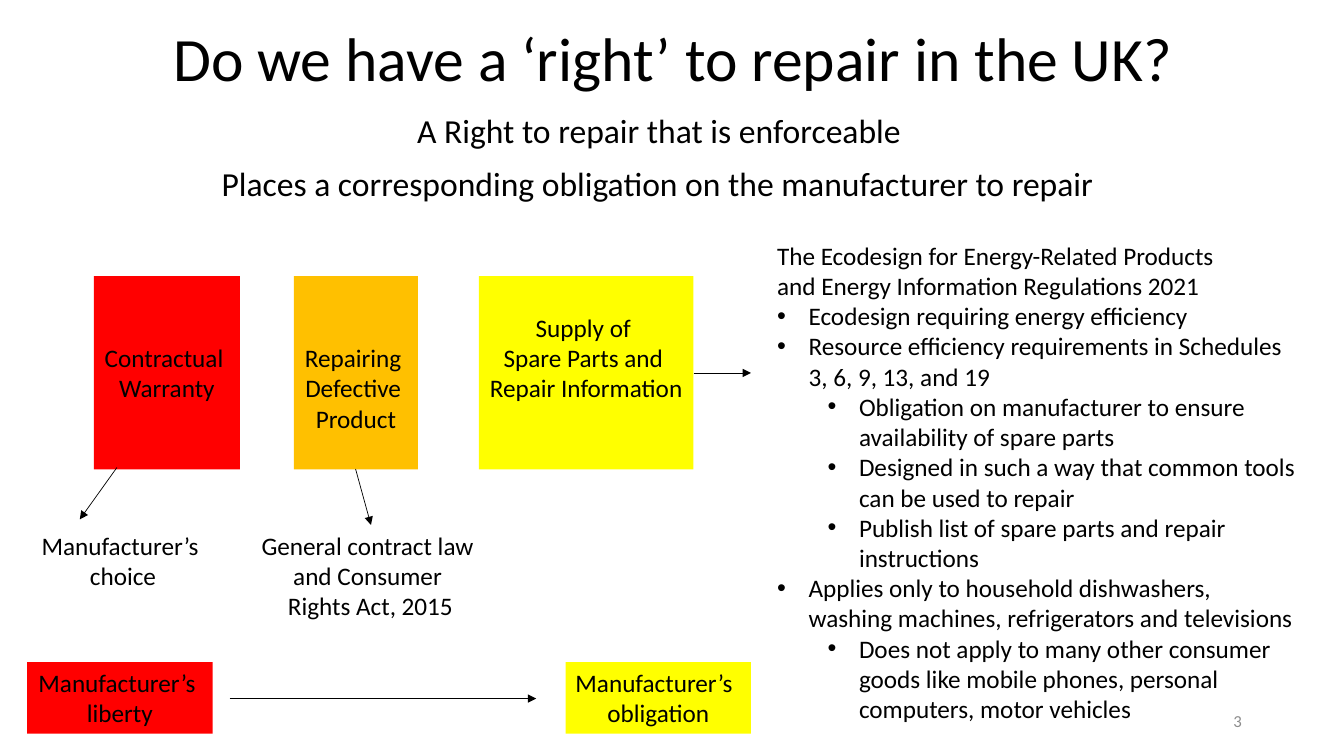
from lxml import etree
from pptx import Presentation
from pptx.dml.color import RGBColor
from pptx.enum.shapes import MSO_CONNECTOR, MSO_SHAPE
from pptx.enum.text import MSO_ANCHOR, PP_ALIGN
from pptx.oxml.ns import qn
from pptx.util import Pt

LEFT, CENTER, RIGHT = PP_ALIGN.LEFT, PP_ALIGN.CENTER, PP_ALIGN.RIGHT
TOP, MIDDLE = MSO_ANCHOR.TOP, MSO_ANCHOR.MIDDLE
RECT, STRAIGHT = MSO_SHAPE.RECTANGLE, MSO_CONNECTOR.STRAIGHT
FONT = "Calibri"
BLACK, RED, AMBER, YELLOW, GREY = "000000", "FF0000", "FFC000", "FFFF00", "8C8C8C"
LINE_HEIGHT = 21.9
BULLET_HANG = 22.5
LEVEL_STEP = 36

REGULATIONS = [
    (None, "The Ecodesign for Energy-Related Products"),
    (None, "and Energy Information Regulations 2021"),
    (0, "Ecodesign requiring energy efficiency"),
    (0, "Resource efficiency requirements in Schedules 3, 6, 9, 13, and 19"),
    (1, "Obligation on manufacturer to ensure availability of spare parts"),
    (1, "Designed in such a way that common tools can be used to repair"),
    (1, "Publish list of spare parts and repair instructions"),
    (0, "Applies only to household dishwashers, washing machines, refrigerators and televisions"),
    (1, "Does not apply to many other consumer goods like mobile phones, "
        "personal computers, motor vehicles"),
]


def rgb(color):
    return RGBColor.from_string(color)


def write(tf, lines, size=18, color=BLACK, align=CENTER, anchor=TOP, wrap=False):
    tf.word_wrap = wrap
    tf.vertical_anchor = anchor
    for i, line in enumerate(lines):
        p = tf.paragraphs[0] if i == 0 else tf.add_paragraph()
        p.text = line
        p.alignment = align
        p.font.name = FONT
        p.font.size = Pt(size)
        p.font.color.rgb = rgb(color)


def add_label(s, box, lines, **style):
    sp = s.shapes.add_textbox(*map(Pt, box))
    write(sp.text_frame, lines, **style)
    return sp


def add_block(s, box, fill, lines, skipped_lines=0):
    sp = s.shapes.add_shape(RECT, *map(Pt, box))
    sp.shadow.inherit = False
    sp.fill.solid()
    sp.fill.fore_color.rgb = rgb(fill)
    sp.line.fill.background()
    write(sp.text_frame, lines)
    sp.text_frame.margin_top = Pt(3.6 + skipped_lines * LINE_HEIGHT)
    return sp


def add_arrow(s, *ends):
    line = s.shapes.add_connector(STRAIGHT, *map(Pt, ends))
    line.line.color.rgb = rgb(BLACK)
    line.line.width = Pt(0.5)
    etree.SubElement(line.line._get_or_add_ln(), qn("a:tailEnd"), type="triangle")
    etree.SubElement(line._element.spPr, qn("a:effectLst"))


def set_bullet(p, level):
    p.level = level
    pPr = p._p.get_or_add_pPr()
    pPr.set("marL", str(Pt(BULLET_HANG + level * LEVEL_STEP)))
    pPr.set("indent", str(-Pt(BULLET_HANG)))
    bullet_font = etree.Element(qn("a:buFont"), typeface="Arial")
    bullet = etree.Element(qn("a:buChar"), char="•")
    pPr.insert(0, bullet_font)
    pPr.insert(1, bullet)


def add_regulations(s, box):
    sp = add_label(s, box, [text for _, text in REGULATIONS], align=LEFT, wrap=True)
    for p, (level, _) in zip(sp.text_frame.paragraphs, REGULATIONS):
        if level is not None:
            set_bullet(p, level)


def set_title(s, box, text):
    sp = s.shapes.title
    sp.left, sp.top, sp.width, sp.height = map(Pt, box)
    write(sp.text_frame, [text], size=44, anchor=MIDDLE, wrap=True)
    sp.text_frame.paragraphs[0].line_spacing = 0.9


def main():
    prs = Presentation()
    prs.slide_width, prs.slide_height = Pt(960), Pt(540)
    s = prs.slides.add_slide(prs.slide_layouts[5])

    set_title(s, (67, 13, 828, 62.6), "Do we have a ‘right’ to repair in the UK?")
    add_label(s, (290.9, 75, 363, 36), ["A Right to repair that is enforceable"],
              size=24, align=LEFT)
    add_label(s, (151.2, 113, 643, 36),
              ["Places a corresponding obligation on the manufacturer to repair"],
              size=24, align=LEFT)

    for left, width, fill, skipped, lines in [
        (67, 104.4, RED, 2, ["Contractual ", "Warranty"]),
        (210, 88.6, AMBER, 2, ["Repairing ", "Defective ", "Product"]),
        (342, 153.4, YELLOW, 1, ["Supply of ", "Spare Parts and ", "Repair Information"]),
    ]:
        add_block(s, (left, 197.3, width, 138), fill, lines, skipped)

    add_label(s, (21.6, 375, 132.5, 51), ["Manufacturer’s ", "choice"])
    add_label(s, (178.6, 375, 172, 73),
              ["General contract law ", "and Consumer ", "Rights Act, 2015"])
    add_regulations(s, (548, 167.8, 387.4, 356.4))

    add_block(s, (19.4, 473, 132.5, 51), RED, ["Manufacturer’s ", "liberty"])
    obligation = add_block(s, (404, 473, 132.5, 51), YELLOW, ["Manufacturer’s", "obligation"])
    obligation.text_frame.paragraphs[0].alignment = LEFT

    add_arrow(s, 83.5, 334, 57, 371)
    add_arrow(s, 254, 335, 265, 375)
    add_arrow(s, 495.4, 266.4, 536.4, 266.4)
    add_arrow(s, 164, 499, 383, 499)

    add_label(s, (678.2, 500.4, 216, 28.8), ["3"], size=12, color=GREY,
              align=RIGHT, anchor=MIDDLE, wrap=True)
    prs.save("out.pptx")


if __name__ == "__main__":
    main()
